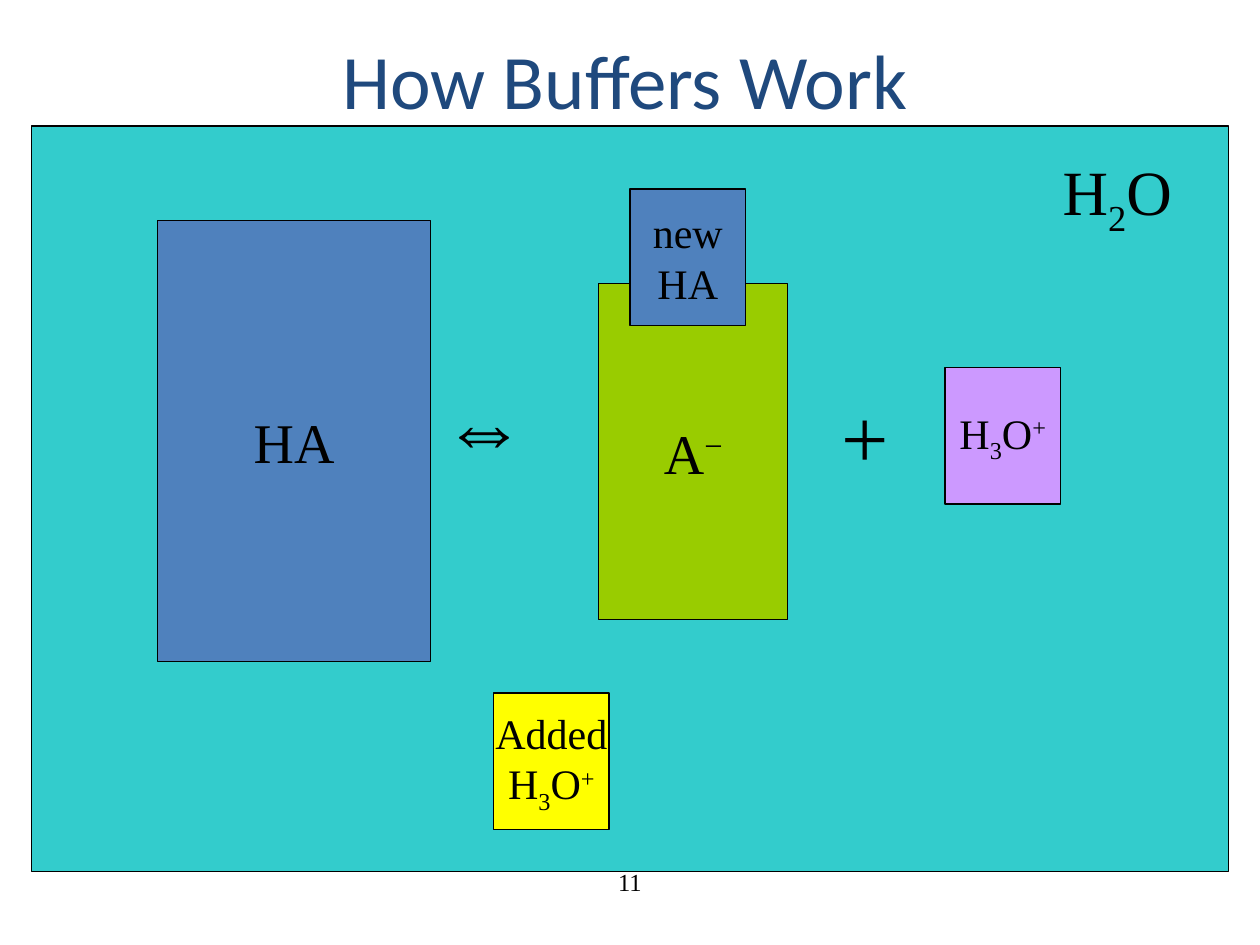
"""Build the slide that explains how a buffer takes up added acid."""
from dataclasses import dataclass
from typing import Any, NamedTuple, Optional

from pptx import Presentation
from pptx.dml.color import RGBColor as Rgb
from pptx.enum.shapes import MSO_SHAPE as Preset
from pptx.enum.text import MSO_ANCHOR as Anchor, MSO_AUTO_SIZE as AutoSize, PP_ALIGN as Align
from pptx.slide import Slide
from pptx.util import Cm, Pt


@dataclass(frozen=True)
class Theme:
    """Fonts, colours and type sizes of the slide."""
    title_font: str = "Calibri"
    body_font: str = "Times New Roman"
    ink: str = "000000"
    title_ink: str = "1F497D"
    water: str = "33CCCC"
    acid: str = "4F81BD"
    base: str = "99CC00"
    hydronium: str = "CC99FF"
    added: str = "FFFF00"
    title_size: int = 44
    sign_size: int = 48
    water_size: int = 36
    species_size: int = 32
    portion_size: int = 24
    number_size: int = 14
    outline: float = 0.75


class Run(NamedTuple):
    """A piece of a formula with its baseline shift in percent."""
    text: str
    shift: int = 0


class Box(NamedTuple):
    """Left, top, width and height in centimetres."""
    left: float
    top: float
    width: float
    height: float


Lines = tuple[tuple[Run, ...], ...]


@dataclass(frozen=True)
class Block:
    """A filled rectangle that stands for an amount of a species."""
    box: Box
    fill: str
    lines: Lines = ()
    size: int = 0


@dataclass(frozen=True)
class Label:
    """Free text on the slide."""
    box: Box
    lines: Lines
    size: int
    align: Optional[Align] = None
    grows: bool = True


THEME = Theme()
SUB, SUP = -25, 30
PORTION = (2.33, 2.75)
HYDRONIUM = (Run("H"), Run("3", SUB), Run("O"), Run("+", SUP))
WATER = (Run("H"), Run("2", SUB), Run("O"))
CONJUGATE_BASE = (Run("A"), Run("−", SUP))
ACID = (Run("HA"),)

TANK = Block(Box(0.64, 2.54, 24.13, 15.03), THEME.water)
LABELS = (
    Label(Box(8.68, 17.36, 8.04, 1.27), ((Run("11"),),), THEME.number_size, Align.CENTER, False),
    Label(Box(21.17, 2.96, 2.77, 1.78), (WATER,), THEME.water_size),
    Label(Box(8.68, 7.41, 2.29, 2.29), ((Run("⇔"),),), THEME.sign_size),
    Label(Box(16.72, 7.62, 1.47, 2.29), ((Run("+"),),), THEME.sign_size),
)
SPECIES = (
    Block(Box(19.05, 7.41, *PORTION), THEME.hydronium, (HYDRONIUM,), THEME.portion_size),
    Block(Box(12.07, 5.72, 3.81, 6.77), THEME.base, (CONJUGATE_BASE,), THEME.species_size),
    Block(Box(9.95, 13.97, *PORTION), THEME.added, ((Run("Added"),), HYDRONIUM),
          THEME.portion_size),
    Block(Box(12.7, 3.81, *PORTION), THEME.acid, ((Run("new"),), ACID), THEME.portion_size),
    Block(Box(3.18, 4.45, 5.5, 8.89), THEME.acid, (ACID,), THEME.species_size),
)


def apply(target: Any, values: dict[str, Any]) -> None:
    """Set every named value on the target."""
    for name, value in values.items():
        setattr(target, name, value)


def lengths(box: Box) -> list[Cm]:
    """Turn a box into slide lengths."""
    return [Cm(side) for side in box]


def write(frame: Any, lines: Lines, size: int, align: Optional[Align],
          family: str = THEME.body_font, ink: str = THEME.ink) -> None:
    """Write lines of runs into a text frame."""
    for index, line in enumerate(lines):
        paragraph = frame.add_paragraph() if index else frame.paragraphs[0]
        paragraph.alignment = align
        for piece in line:
            run = paragraph.add_run()
            run.text = piece.text
            apply(run.font, {"name": family, "size": Pt(size)})
            run.font.color.rgb = Rgb.from_string(ink)
            if piece.shift:
                run.font._element.set("baseline", str(piece.shift * 1000))


def draw_block(slide: Slide, block: Block) -> None:
    """Draw one outlined rectangle with its centred formula."""
    rectangle = slide.shapes.add_shape(Preset.RECTANGLE, *lengths(block.box))
    rectangle.shadow.inherit = False
    rectangle.fill.solid()
    rectangle.fill.fore_color.rgb = Rgb.from_string(block.fill)
    rectangle.line.color.rgb = Rgb.from_string(THEME.ink)
    rectangle.line.width = Pt(THEME.outline)
    apply(rectangle.text_frame, {"word_wrap": False, "vertical_anchor": Anchor.MIDDLE})
    write(rectangle.text_frame, block.lines, block.size, Align.CENTER)


def draw_label(slide: Slide, label: Label) -> None:
    """Draw one text box."""
    frame = slide.shapes.add_textbox(*lengths(label.box)).text_frame
    fit = AutoSize.SHAPE_TO_FIT_TEXT if label.grows else AutoSize.NONE
    apply(frame, {"word_wrap": not label.grows, "auto_size": fit})
    write(frame, label.lines, label.size, label.align)


def set_title(slide: Slide, text: str, box: Box) -> None:
    """Place and format the title placeholder."""
    title = slide.shapes.title
    apply(title, dict(zip(("left", "top", "width", "height"), lengths(box))))
    apply(title.text_frame, {"vertical_anchor": Anchor.MIDDLE, "word_wrap": True})
    write(title.text_frame, ((Run(text),),), THEME.title_size, Align.CENTER,
          THEME.title_font, THEME.title_ink)


def main() -> None:
    """Build and save the slide."""
    deck = Presentation()
    apply(deck, {"slide_width": Cm(25.4), "slide_height": Cm(19.05)})
    slide = deck.slides.add_slide(deck.slide_layouts[5])
    set_title(slide, "How Buffers Work", Box(0.85, 0, 23.5, 3.18))
    draw_block(slide, TANK)
    for label in LABELS:
        draw_label(slide, label)
    for block in SPECIES:
        draw_block(slide, block)
    deck.save("out.pptx")


if __name__ == "__main__":
    main()
